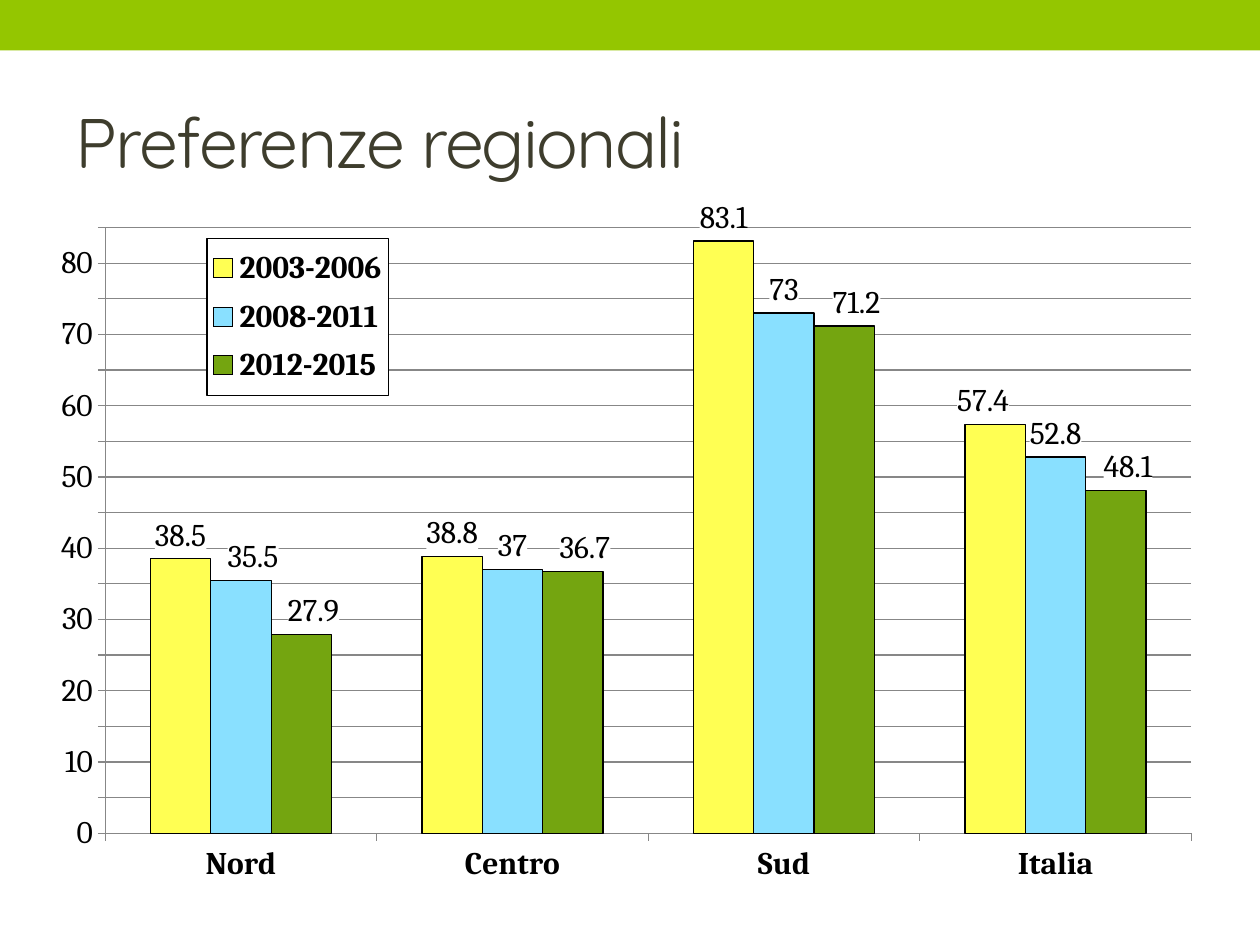
from dataclasses import dataclass

from pptx import Presentation
from pptx.chart.data import CategoryChartData
from pptx.dml.color import RGBColor
from pptx.enum.chart import XL_CHART_TYPE, XL_LABEL_POSITION, XL_LEGEND_POSITION, XL_TICK_MARK
from pptx.enum.shapes import MSO_SHAPE
from pptx.enum.text import MSO_ANCHOR, MSO_AUTO_SIZE, PP_ALIGN
from pptx.oxml import parse_xml
from pptx.oxml.ns import nsdecls
from pptx.util import Cm, Pt


@dataclass(frozen=True)
class Theme:
    """Colours, fonts and type sizes of the slide."""
    band: str = "94C600"
    title: str = "3E3D2D"
    ink: str = "000000"
    paper: str = "FFFFFF"
    grid: str = "878787"
    bars: tuple = ("FFFF53", "89E0FF", "74A510")
    head: str = "Quicksand"
    body: str = "Cambria"
    large: int = 40
    small: int = 18


THEME = Theme()
REGIONS = ("Nord", "Centro", "Sud", "Italia")
PERIODS = {
    "2003-2006": (38.5, 38.8, 83.1, 57.4),
    "2008-2011": (35.5, 37, 73, 52.8),
    "2012-2015": (27.9, 36.7, 71.2, 48.1),
}
SHIFTS = (
    {3: -0.01},
    {0: 0.01, 1: 0, 3: 0},
    {0: 0.01, 1: 0.01, 2: 0.01, 3: 0.01},
)


def style(font, size=THEME.small, face=THEME.body, tint=THEME.ink, bold=False):
    """Set the size, face, colour and weight of a font."""
    font.size, font.name, font.bold = Pt(size), face, bold
    font.color.rgb = RGBColor.from_string(tint)


def write(shape, text, gap=0, align=PP_ALIGN.LEFT, **look):
    """Put one formatted line of text in a shape, with letter spacing in points."""
    frame = shape.text_frame
    frame.word_wrap = True
    frame.auto_size = MSO_AUTO_SIZE.NONE
    frame.vertical_anchor = MSO_ANCHOR.MIDDLE
    line = frame.paragraphs[0]
    line.alignment = align
    run = line.add_run()
    run.text = text
    style(run.font, **look)
    run.font._element.set("spc", str(gap * 100))


def stroke(line, tint):
    """Draw a thin line in one colour."""
    line.color.rgb = RGBColor.from_string(tint)
    line.width = Pt(0.75)


def layout(x, y, w=None, h=None, inner=False):
    """Return a manual chart layout in parts of the chart size."""
    target = '<c:layoutTarget val="inner"/>' if inner else ""
    modes = '<c:xMode val="edge"/><c:yMode val="edge"/>' if w else ""
    sizes = f'<c:w val="{w}"/><c:h val="{h}"/>' if w else ""
    return parse_xml(
        f'<c:layout {nsdecls("c")}><c:manualLayout>{target}{modes}'
        f'<c:x val="{x}"/><c:y val="{y}"/>{sizes}</c:manualLayout></c:layout>')


def panel(fill, line=None):
    """Return shape properties with a plain fill and an optional outline."""
    edge = f'<a:ln w="9525"><a:solidFill><a:srgbClr val="{line}"/></a:solidFill></a:ln>' if line else ""
    return parse_xml(
        f'<c:spPr {nsdecls("c", "a")}><a:solidFill><a:srgbClr val="{fill}"/>'
        f'</a:solidFill>{edge}</c:spPr>')


def place(parent, box):
    """Replace the layout of the plot area or legend."""
    for old in parent.xpath("c:layout"):
        parent.remove(old)
    marks = parent.xpath("c:legendPos")
    if marks:
        marks[0].addnext(box)
    else:
        parent.insert(0, box)


def add_band(slide):
    """Draw the green band along the top edge."""
    band = slide.shapes.add_shape(MSO_SHAPE.RECTANGLE, 0, 0, Cm(25.4), Cm(1.02))
    band.shadow.inherit = False
    band.fill.solid()
    band.fill.fore_color.rgb = RGBColor.from_string(THEME.band)
    band.line.fill.background()


def add_title(slide, text):
    """Move and fill the title placeholder."""
    title = slide.shapes.title
    title.left, title.top, title.width, title.height = Cm(1.27), Cm(1.47), Cm(22.86), Cm(2.74)
    write(title, text, gap=-1, size=THEME.large, face=THEME.head, tint=THEME.title)


def format_axes(chart):
    """Format both axes and the grid."""
    values, groups = chart.value_axis, chart.category_axis
    values.minimum_scale, values.maximum_scale, values.major_unit = 0, 85, 5
    values.has_major_gridlines = True
    stroke(values.major_gridlines.format.line, THEME.grid)
    for axis in (values, groups):
        axis.major_tick_mark = XL_TICK_MARK.OUTSIDE
        axis.minor_tick_mark = XL_TICK_MARK.NONE
        stroke(axis.format.line, THEME.grid)
        style(axis.tick_labels.font, bold=axis is groups)


def format_bars(chart):
    """Colour the bars, show their values and nudge single labels."""
    plot = chart.plots[0]
    plot.gap_width, plot.overlap, plot.vary_by_categories = 150, 0, False
    for series, tint, shifts in zip(plot.series, THEME.bars, SHIFTS):
        series.format.fill.solid()
        series.format.fill.fore_color.rgb = RGBColor.from_string(tint)
        stroke(series.format.line, THEME.ink)
        labels = series.data_labels
        labels.show_value = True
        spots = [series.points[spot].data_label for spot in shifts]
        for label in (labels, *spots):
            style(label.font)
            label.position = XL_LABEL_POSITION.OUTSIDE_END
        for node in series._element.xpath(".//c:dLbl/c:idx"):
            node.addnext(layout(shifts[int(node.get("val"))], 0))
    for node in chart.element.xpath(".//c:dLbls/c:txPr | .//c:dLbl/c:txPr"):
        for old in node.getparent().xpath("c:spPr"):
            node.getparent().remove(old)
        node.addprevious(panel(THEME.paper))


def format_legend(chart):
    """Set the boxed legend over the plot."""
    chart.has_legend = True
    legend = chart.legend
    legend.position = XL_LEGEND_POSITION.RIGHT
    legend.include_in_layout = False
    style(legend.font, bold=True)
    node = chart.element.xpath(".//c:legend")[0]
    place(node, layout(0.15, 0.06, 0.15, 0.22))
    node.xpath("c:txPr")[0].addprevious(panel(THEME.paper, THEME.ink))


def add_bars(slide):
    """Add the column chart of regions by period."""
    data = CategoryChartData()
    data.categories = REGIONS
    for name, values in PERIODS.items():
        data.add_series(name, values)
    chart = slide.shapes.add_chart(
        XL_CHART_TYPE.COLUMN_CLUSTERED, Cm(0.51), Cm(3.94), Cm(24.41), Cm(14.4), data).chart
    chart.has_title = False
    style(chart.font)
    format_axes(chart)
    format_bars(chart)
    format_legend(chart)
    place(chart.element.xpath(".//c:plotArea")[0], layout(0.066, 0.045, 0.897, 0.848, True))


def main():
    """Build and save the slide."""
    deck = Presentation()
    deck.slide_width, deck.slide_height = Cm(25.4), Cm(19.05)
    slide = deck.slides.add_slide(deck.slide_layouts[5])
    add_band(slide)
    add_title(slide, "Preferenze regionali")
    add_bars(slide)
    deck.save("out.pptx")


if __name__ == "__main__":
    main()
